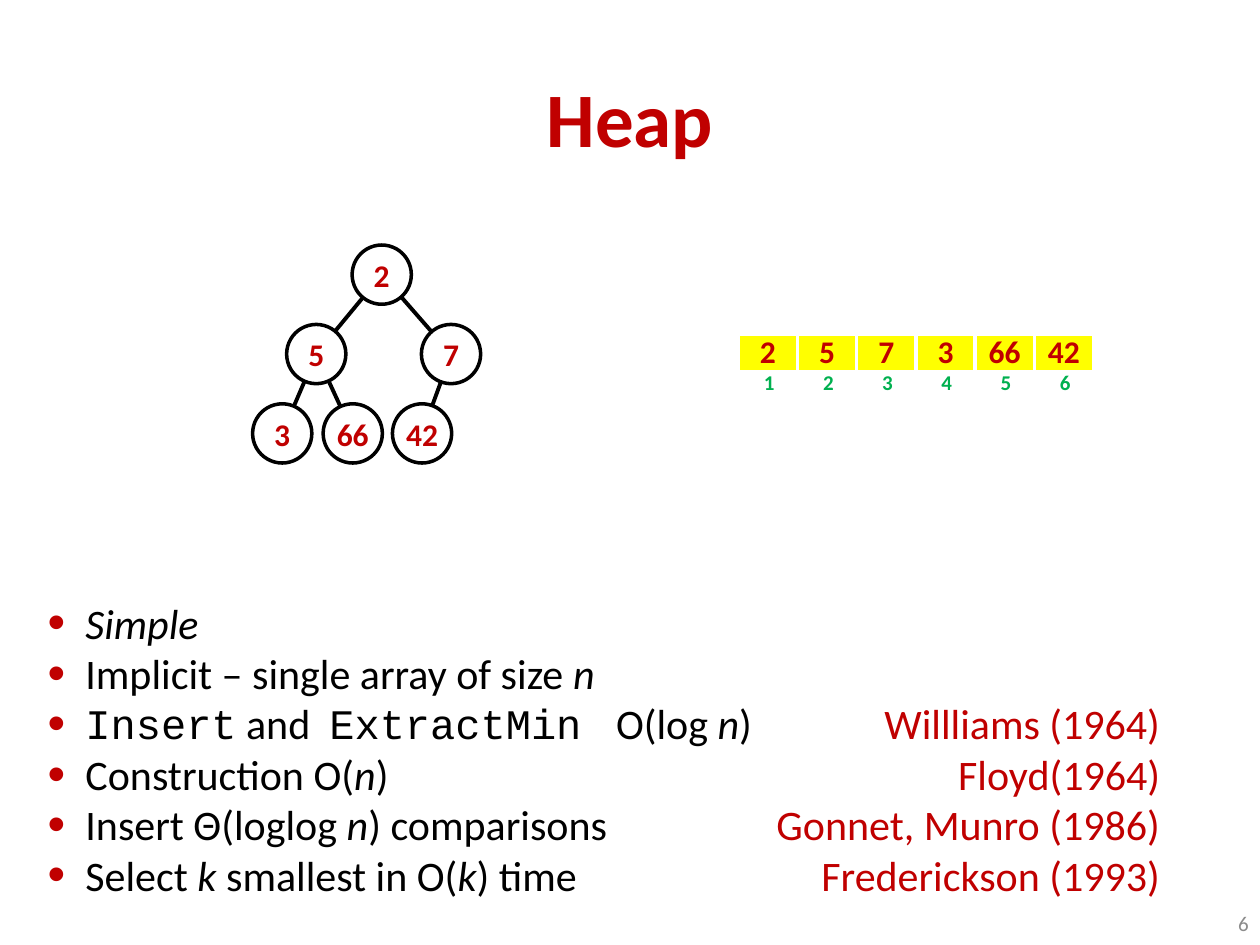
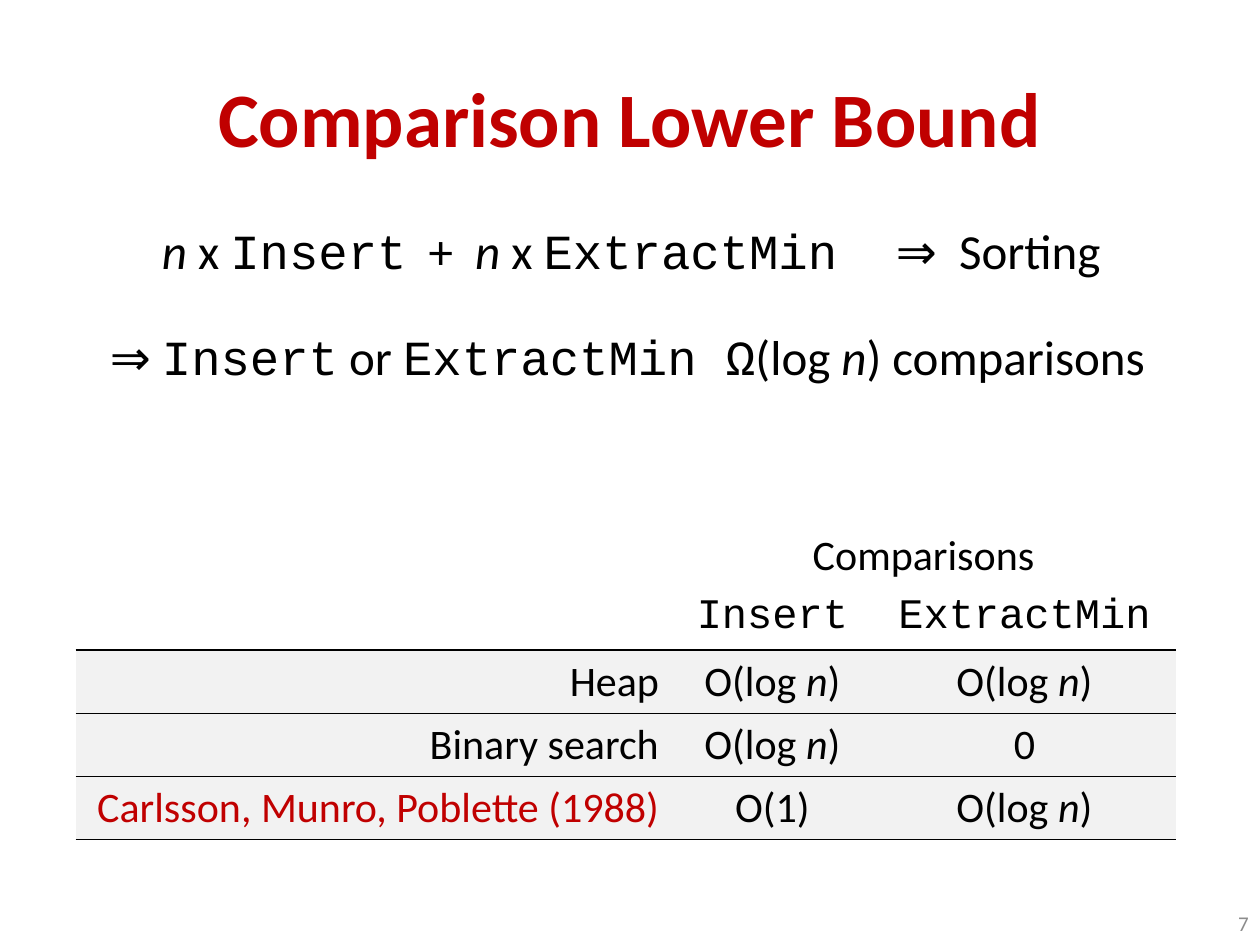
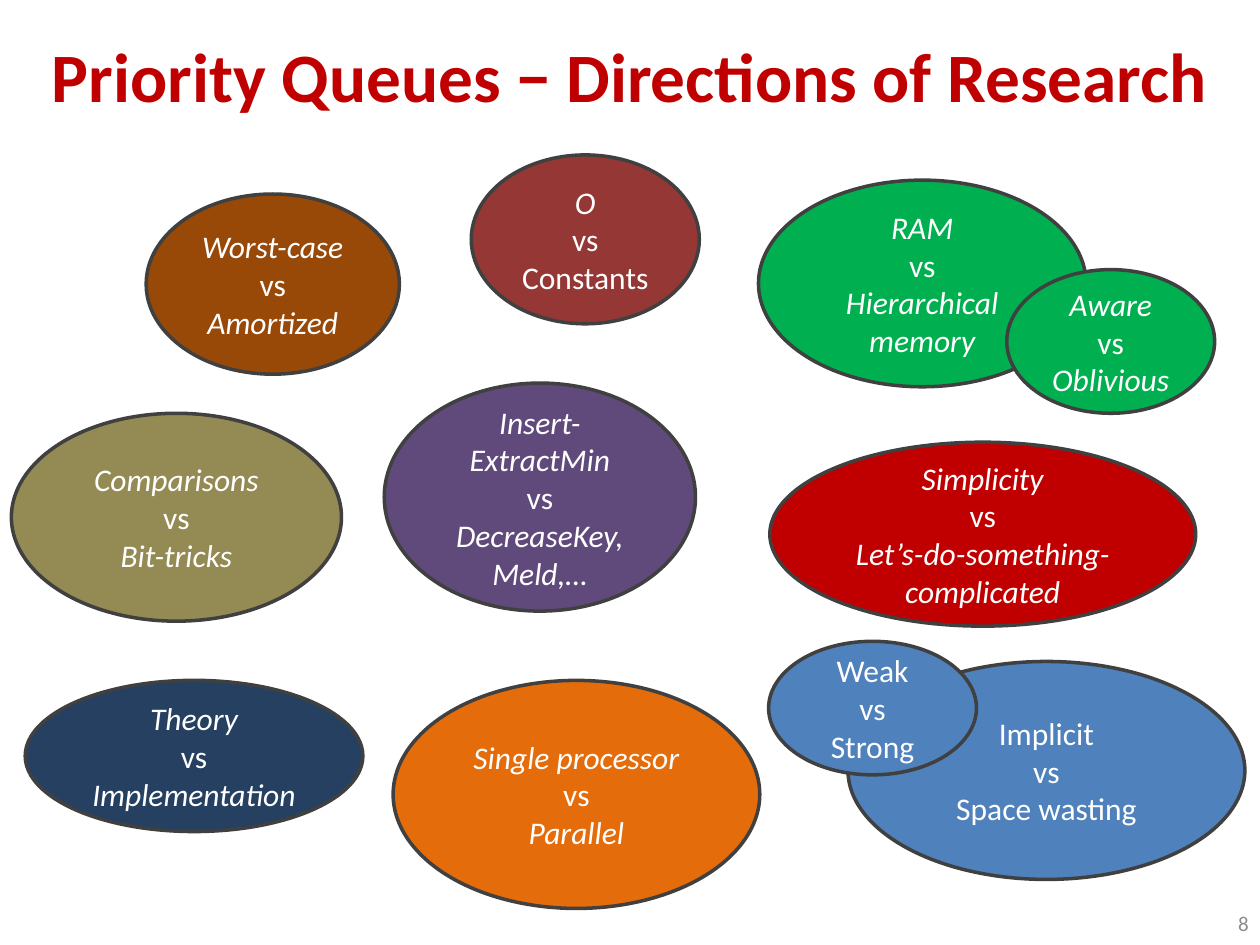
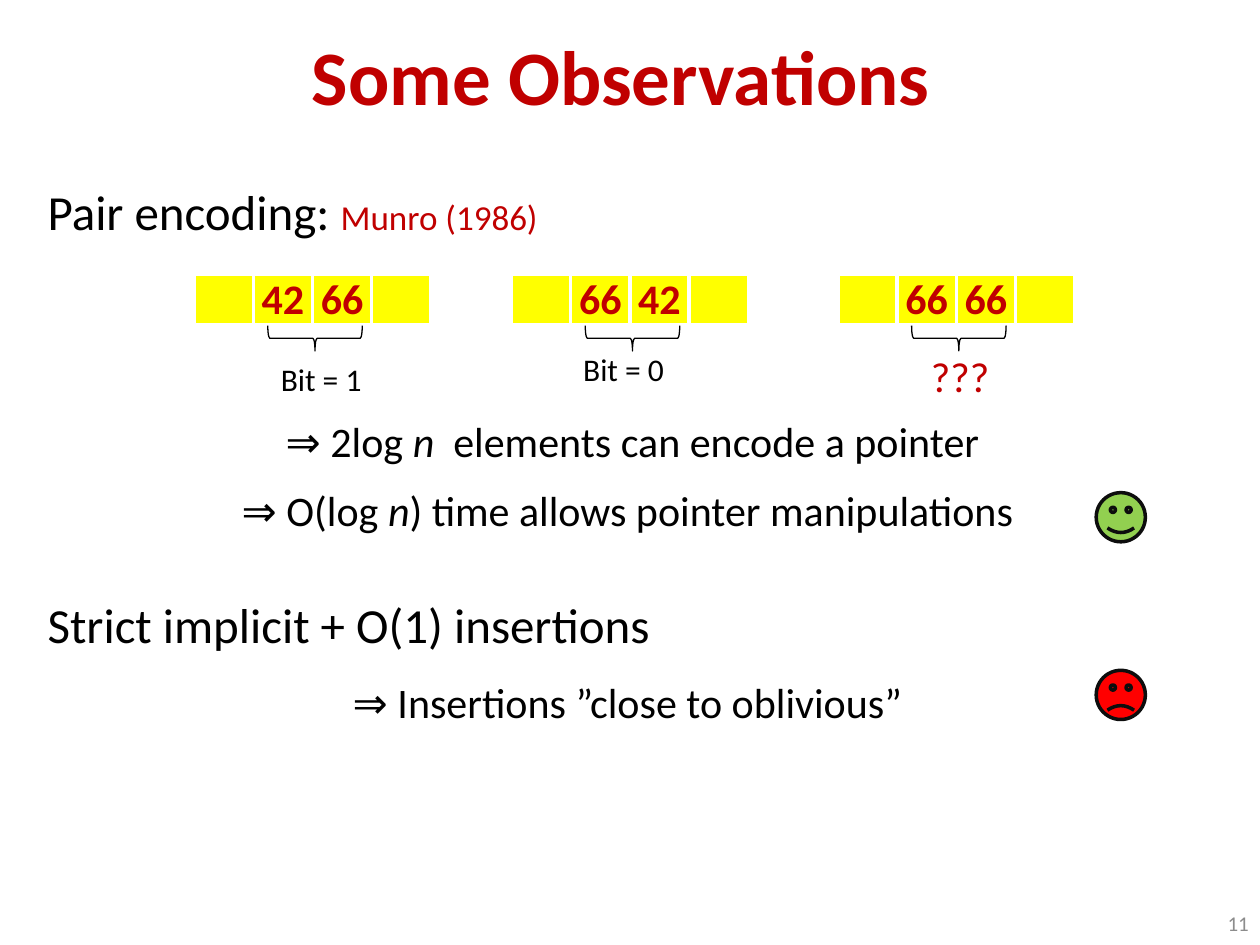
from itertools import groupby

from lxml import etree
from pptx import Presentation
from pptx.dml.color import RGBColor
from pptx.enum import shapes, text
from pptx.oxml.ns import qn
from pptx.util import Inches, Pt

RED, BLACK, WHITE = "C00000", "000000", "FFFFFF"
YELLOW, GREEN, GREY, PALE = "FFFF00", "00B050", "8C8C8C", "F2F2F2"
OUTLINE, BLUE, INK = "404040", "4F81BD", "0D0D0D"
FONT, MONO = "Calibri", "Courier New"
ITALIC, CODE, CITATION = "*", "`", "^"
LEFT, CENTER, RIGHT = text.PP_ALIGN.LEFT, text.PP_ALIGN.CENTER, text.PP_ALIGN.RIGHT
TOP, MIDDLE = text.MSO_ANCHOR.TOP, text.MSO_ANCHOR.MIDDLE
CELL = 0.47


def rgb(value):
    return RGBColor.from_string(value)


def add_element(parent, tag, **attributes):
    return etree.SubElement(parent, qn(tag), attributes)


class Deck:
    def __init__(self):
        self.presentation = Presentation()
        self.presentation.slide_width = Inches(10)
        self.presentation.slide_height = Inches(7.5)
        self.slide = None

    def new_slide(self, title, number, left=0.5, top=0.3, width=9, size=44):
        self.slide = self.presentation.slides.add_slide(self.presentation.slide_layouts[6])
        self.text_box(title, left, top, width, 1.25, size, RED, CENTER, MIDDLE, bold=True)
        self.text_box(number, 7.68, 7.13, 2.33, 0.4, 12, GREY, RIGHT, MIDDLE)

    def set_text(self, text_frame, content, size, color=BLACK, align=LEFT, bold=False):
        for index, line in enumerate(content.split("\n")):
            paragraph = text_frame.add_paragraph() if index else text_frame.paragraphs[0]
            paragraph.alignment = align
            active = set()
            for mark, letters in groupby(line, lambda c: c if c in ITALIC + CODE + CITATION else ""):
                if mark:
                    active ^= {mark}
                    continue
                run = paragraph.add_run()
                run.text = "".join(letters)
                font = run.font
                font.size, font.bold, font.italic = Pt(size), bold, ITALIC in active
                font.name = MONO if CODE in active else FONT
                font.color.rgb = rgb(RED if CITATION in active else color)

    def text_box(self, content, left, top, width, height, size, color=BLACK,
                 align=LEFT, anchor=TOP, bold=False):
        box = self.slide.shapes.add_textbox(Inches(left), Inches(top), Inches(width), Inches(height))
        frame = box.text_frame
        frame.word_wrap = True
        frame.vertical_anchor = anchor
        self.set_text(frame, content, size, color, align, bold)
        return frame

    def statement(self, content, left, top, width, size):
        frame = self.text_box(content, left, top, width, 0.66, size, align=CENTER)
        frame.paragraphs[0].space_before = Pt(0.2 * size)

    def bullets(self, content, left, top, width, height, size, tab):
        frame = self.text_box(content, left, top, width, height, size)
        for paragraph in frame.paragraphs:
            properties = paragraph._p.get_or_add_pPr()
            properties.set("marL", str(Inches(0.3)))
            properties.set("indent", str(Inches(-0.3)))
            color = add_element(properties, "a:buClr")
            add_element(color, "a:srgbClr", val=RED)
            add_element(properties, "a:buSzPct", val="120000")
            add_element(properties, "a:buFont", typeface="Arial")
            add_element(properties, "a:buChar", char="•")
            tabs = add_element(properties, "a:tabLst")
            add_element(tabs, "a:tab", pos=str(Inches(tab)), algn="r")

    def shape(self, kind, left, top, width, height, fill=None, line=BLACK, line_width=2.0):
        shape = self.slide.shapes.add_shape(
            kind, Inches(left), Inches(top), Inches(width), Inches(height))
        shape.shadow.inherit = False
        if fill:
            shape.fill.solid()
            shape.fill.fore_color.rgb = rgb(fill)
        else:
            shape.fill.background()
        shape.line.color.rgb = rgb(line)
        shape.line.width = Pt(line_width)
        return shape

    def ellipse(self, content, left, top, width, height, fill, line=OUTLINE, color=WHITE, bold=False):
        shape = self.shape(shapes.MSO_SHAPE.OVAL, left, top, width, height, fill, line)
        shape.text_frame.vertical_anchor = MIDDLE
        self.set_text(shape.text_frame, content, 18, color, CENTER, bold)
        return shape.text_frame

    def node(self, content, x, y):
        frame = self.ellipse(content, x - CELL / 2, y - CELL / 2, CELL, CELL, WHITE, BLACK, RED, True)
        frame.margin_left = frame.margin_right = 0
        frame.word_wrap = False

    def edge(self, start, end):
        points = [Inches(value) for value in (*start, *end)]
        connector = self.slide.shapes.add_connector(shapes.MSO_CONNECTOR.STRAIGHT, *points)
        connector.line.color.rgb = rgb(BLACK)
        connector.line.width = Pt(2.25)
        add_element(connector._element.spPr, "a:effectLst")

    def table(self, left, top, widths, row_height, row_count):
        frame = self.slide.shapes.add_table(
            row_count, len(widths), Inches(left), Inches(top),
            Inches(sum(widths)), Inches(row_height * row_count))
        table = frame.table
        table.first_row = table.horz_banding = False
        for column, width in zip(table.columns, widths):
            column.width = Inches(width)
        return table

    def cell(self, cell, content, size, color=BLACK, align=CENTER, bold=False,
             fill=None, sides="", border=BLACK, border_width=1.0):
        properties = cell._tc.get_or_add_tcPr()
        for side in "LRTB":
            line = add_element(properties, "a:ln" + side, w=str(Pt(border_width)))
            if side in sides:
                solid = add_element(line, "a:solidFill")
                add_element(solid, "a:srgbClr", val=border)
            else:
                add_element(line, "a:noFill")
        if fill:
            cell.fill.solid()
            cell.fill.fore_color.rgb = rgb(fill)
        else:
            cell.fill.background()
        self.set_text(cell.text_frame, content, size, color, align, bold)

    def array(self, values, left, top, height, size):
        table = self.table(left, top, [CELL] * len(values), height, 1)
        for cell, value in zip(table.rows[0].cells, values):
            cell.margin_left = cell.margin_right = cell.margin_top = cell.margin_bottom = 0
            self.cell(cell, value, size, RED, bold=True, fill=YELLOW,
                      sides="LRTB", border=WHITE, border_width=2.25)

    def indices(self, count, left, top):
        table = self.table(left, top, [CELL] * count, 0.3, 1)
        for index, cell in enumerate(table.rows[0].cells, 1):
            self.cell(cell, str(index), 12, GREEN, bold=True)

    def smiley(self, top, fill):
        return self.shape(shapes.MSO_SHAPE.SMILEY_FACE, 8.7, top, 0.39, 0.39, fill, INK)


def heap(deck):
    deck.new_slide("Heap", "6")
    values = ["2", "5", "7", "3", "66", "42"]
    node_x = [3.03, 2.51, 3.58, 2.24, 2.8, 3.35]
    centers = [(x, 2.18 + 0.63 * ((i + 1).bit_length() - 1)) for i, x in enumerate(node_x)]
    for child in range(1, len(centers)):
        deck.edge(centers[child], centers[(child - 1) // 2])
    for value, center in zip(values, centers):
        deck.node(value, *center)
    deck.indices(len(values), 5.87, 2.89)
    deck.array(values, 5.86, 2.65, 0.3, 18)
    deck.bullets(
        "*Simple*\n"
        "Implicit – single array of size *n*\n"
        "`Insert` and  `ExtractMin ` O(log *n*)\t^Willliams (1964)^\n"
        "Construction O(*n*)\t^Floyd(1964)^\n"
        "Insert Θ(loglog *n*) comparisons\t^Gonnet, Munro (1986)^\n"
        "Select *k* smallest in O(*k*) time\t^Frederickson (1993)^",
        0.28, 4.69, 9.53, 2.52, 24, tab=8.83)


def lower_bound(deck):
    deck.new_slide("Comparison Lower Bound", "7")
    deck.statement("*n* x `Insert`  +  *n* x `ExtractMin  `⇒  Sorting", 0.51, 1.7, 9, 28)
    deck.statement("⇒ `Insert` or `ExtractMin Ω`(log *n*) comparisons", -0.04, 2.54, 10.04, 28)
    logarithmic = "O(log *n*)"
    rows = [
        ("", "Comparisons", ""),
        ("", "`Insert`", "`ExtractMin`"),
        ("Heap", logarithmic, logarithmic),
        ("Binary search", logarithmic, "0"),
        ("^Carlsson, Munro, Poblette (1988)^", "O(1)", logarithmic),
    ]
    table = deck.table(0.6, 4.16, [4.73, 1.6, 2.4], 0.5, len(rows))
    table.cell(0, 1).merge(table.cell(0, 2))
    for r, row in enumerate(rows):
        for c, content in enumerate(row):
            deck.cell(table.cell(r, c), content, 24, align=CENTER if c else RIGHT,
                      fill=PALE if r > 1 else None, sides=("", "B", "TB")[min(r, 2)])


def directions(deck):
    deck.new_slide("Priority Queues − Directions of Research", "8", 0, -0.03, 10, 39.6)
    topics = [
        ("*Comparisons*", "*Bit-tricks*", 0.09, 3.28, 2.62, 1.65, "948A54"),
        ("*Single processor*", "*Parallel*", 3.12, 5.4, 2.91, 1.81, "E46C0A"),
        ("*RAM*", "*Hierarchical memory*", 6.02, 1.43, 2.6, 1.64, GREEN),
        ("Implicit", "Space wasting", 6.73, 5.25, 3.15, 1.73, BLUE),
        ("*Insert-ExtractMin*", "*DecreaseKey, Meld,…*", 3.05, 3.04, 2.47, 1.81, "604A7B"),
        ("Weak", "Strong", 6.1, 5.09, 1.65, 1.06, BLUE),
        ("*O*", "Constants", 3.74, 1.23, 1.81, 1.34, "953735"),
        ("*Simplicity*", "*Let’s-do-something-complicated*", 6.11, 3.51, 3.38, 1.46, RED),
        ("*Worst-case*", "*Amortized*", 1.16, 1.54, 2.01, 1.43, "984807"),
        ("*Theory*", "*Implementation*", 0.2, 5.4, 2.68, 1.2, "254061"),
        ("*Aware*", "*Oblivious*", 7.99, 2.14, 1.65, 1.14, GREEN),
    ]
    for first, second, *place, fill in topics:
        deck.ellipse(f"{first}\nvs\n{second}", *place, fill)


def observations(deck):
    deck.new_slide("Some Observations", "11", 0.43, -0.03)
    for left, pair in ((1.54, ("42", "66")), (4.06, ("66", "42")), (6.65, ("66", "66"))):
        deck.array(["", *pair, ""], left, 2.18, 0.4, 24)
        brace = deck.shape(shapes.MSO_SHAPE.LEFT_BRACE, left + 0.86, 2.31, 0.2, 0.75, line_width=0.75)
        brace.rotation = 270
    deck.text_box("Bit = 1", 2.13, 2.81, 0.98, 0.4, 18)
    deck.text_box("Bit = 0", 4.53, 2.73, 0.98, 0.4, 18)
    deck.text_box("???", 7.13, 2.73, 0.98, 0.5, 24, RED, CENTER)
    encoding = deck.text_box("Pair encoding: ^Munro (1986)^", 0.28, 1.39, 6.93, 0.57, 28)
    encoding.paragraphs[0].runs[-1].font.size = Pt(20)
    deck.statement("⇒ 2log *n*  elements can encode a pointer", 0, 3.25, 10.04, 24)
    deck.statement("⇒ O(log *n*) time allows pointer manipulations", -0.04, 3.8, 10.04, 24)
    deck.text_box("Strict implicit + O(1) insertions", 0.28, 4.67, 6.93, 0.57, 28)
    deck.statement("⇒ Insertions ”close to oblivious”", -0.04, 5.32, 10.04, 24)
    deck.smiley(3.91, "92D050")
    frown = deck.smiley(5.32, "FF0000")
    frown.adjustments[0] = -0.047


def main():
    deck = Deck()
    for build in (heap, lower_bound, directions, observations):
        build(deck)
    deck.presentation.save("out.pptx")


if __name__ == "__main__":
    main()
